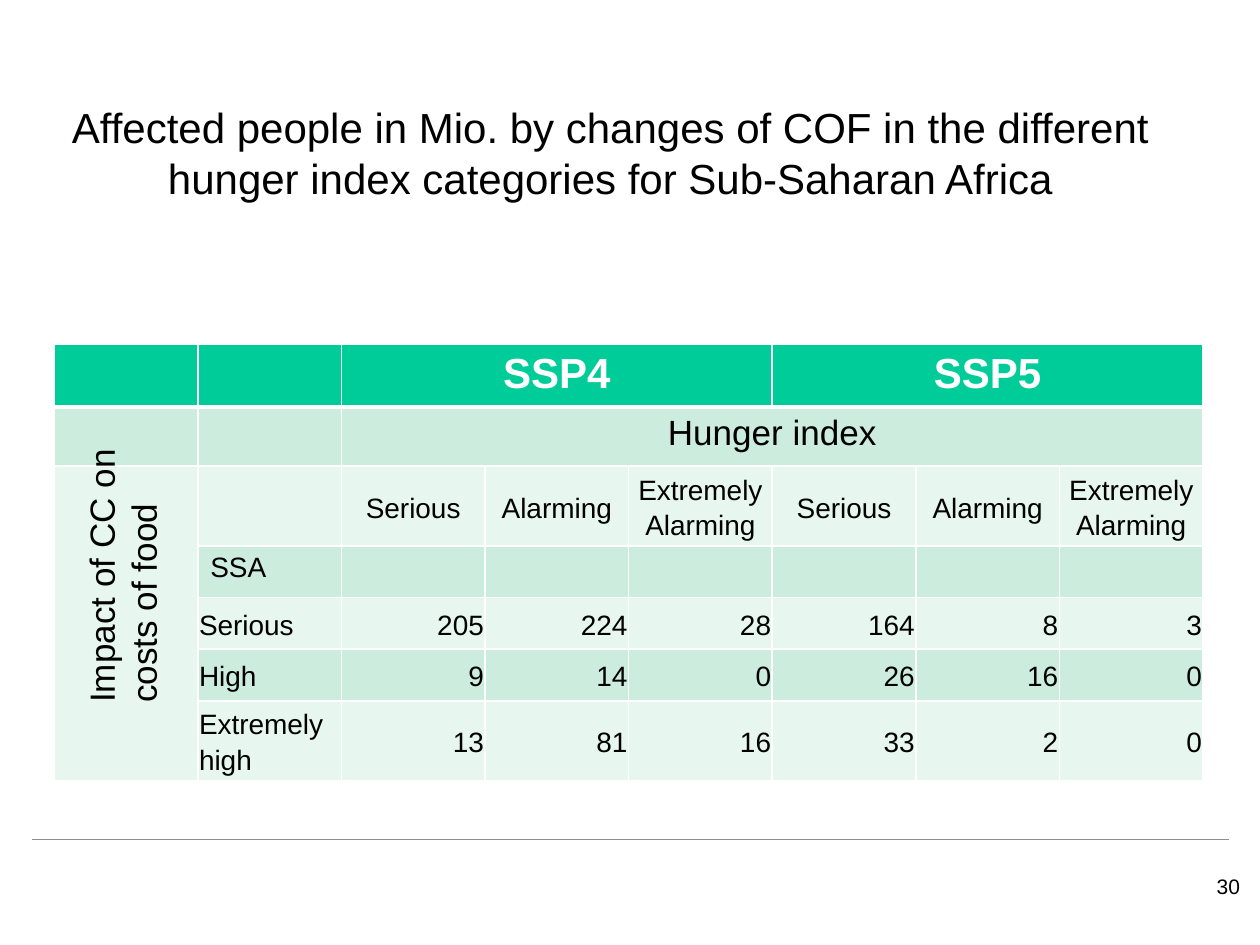
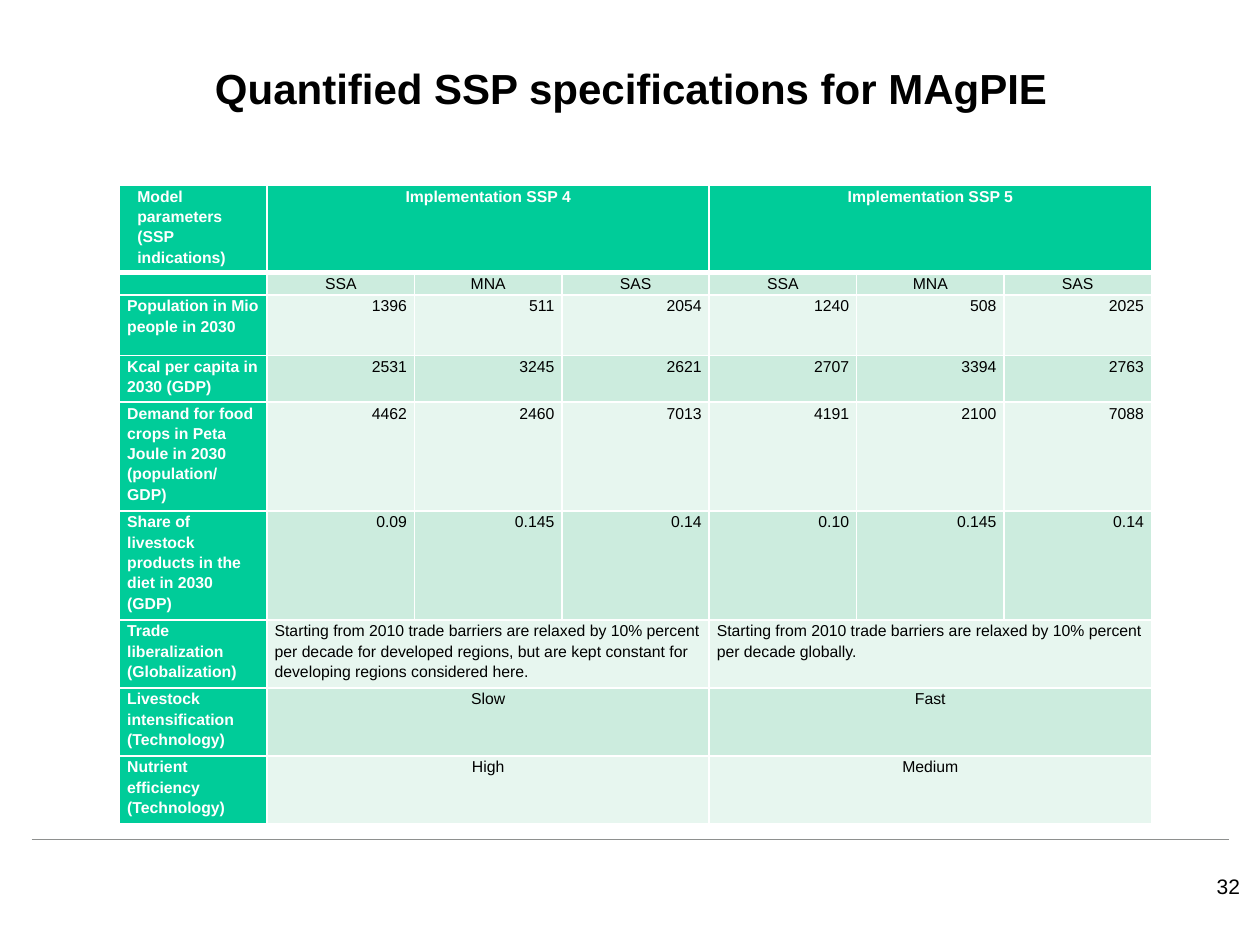
from dataclasses import dataclass

from lxml import etree
from pptx import Presentation
from pptx.dml.color import RGBColor
from pptx.enum import shapes, text
from pptx.oxml.ns import qn
from pptx.util import Emu, Pt

PX = 9144  # 100 px to the inch
LEFT, CENTER, RIGHT = text.PP_ALIGN.LEFT, text.PP_ALIGN.CENTER, text.PP_ALIGN.RIGHT
TOP, MIDDLE = text.MSO_ANCHOR.TOP, text.MSO_ANCHOR.MIDDLE


@dataclass(frozen=True)
class Theme:
    font: str = "Arial"
    ink: str = "000000"
    paper: str = "FFFFFF"
    header: str = "00CC99"
    band_dark: str = "CCECDE"
    band_light: str = "E7F6EF"
    rule: str = "8E908F"
    title: int = 24
    subhead: int = 20
    body: int = 16
    footer: int = 12
    small: int = 9


THEME = Theme()


def px(length):
    return Emu(length * PX)


def write(frame, words, size=THEME.body, color=THEME.ink, bold=False,
          align=LEFT, spacing=None):
    """Fill a text frame, one paragraph for each line of words."""
    for number, line in enumerate(words.split("\n")):
        para = frame.paragraphs[0] if number == 0 else frame.add_paragraph()
        para.alignment = align
        if spacing:
            para.line_spacing = spacing
        if not line:
            etree.SubElement(para._p, qn("a:endParaRPr"), sz=str(size * 100))
            continue
        span = para.add_run()
        span.text = line
        span.font.name = THEME.font
        span.font.size = Pt(size)
        span.font.bold = bold
        span.font.color.rgb = RGBColor.from_string(color)


def set_margins(target, margins):
    (target.margin_left, target.margin_top,
     target.margin_right, target.margin_bottom) = map(px, margins)


def set_borders(cell, color, widths):
    """Draw the cell's left, right, top and bottom lines, widths in points."""
    properties = cell._tc.get_or_add_tcPr()
    for place, (side, width) in enumerate(zip("LRTB", widths)):
        line = etree.Element(qn(f"a:ln{side}"), w=str(Pt(width)))
        fill = etree.SubElement(line, qn("a:solidFill"))
        etree.SubElement(fill, qn("a:srgbClr"), val=color)
        properties.insert(place, line)


class Deck:
    def __init__(self, theme):
        self.theme = theme
        self.deck = Presentation()
        self.deck.slide_width, self.deck.slide_height = px(1000), px(750)
        self.page = None

    def add_page(self, number):
        self.page = self.deck.slides.add_slide(self.deck.slide_layouts[6])
        self.rule(25, 975, 666)
        self.text((890, 688, 104, 24), str(number), size=self.theme.footer, align=RIGHT)

    def rule(self, left, right, y):
        line = self.page.shapes.add_connector(
            shapes.MSO_CONNECTOR.STRAIGHT, px(left), px(y), px(right), px(y))
        line.line.color.rgb = RGBColor.from_string(self.theme.rule)
        line.line.width = Pt(0.5)
        etree.SubElement(line._element.spPr, qn("a:effectLst"))

    def text(self, at, words, margins=(10, 5, 10, 5), anchor=TOP, wrap=True,
             rotation=0, **style):
        box = self.page.shapes.add_textbox(*map(px, at))
        box.rotation = rotation
        frame = box.text_frame
        frame.word_wrap = wrap
        frame.vertical_anchor = anchor
        set_margins(frame, margins)
        write(frame, words, **style)

    def table(self, at, column_width, heights, rows, look, merges=()):
        """Build a banded table; None in rows continues the cell to its left."""
        columns = len(rows[0])
        table = self.page.shapes.add_table(
            len(rows), columns, px(at[0]), px(at[1]),
            px(column_width * columns), px(sum(heights))).table
        table.first_row = table.horz_banding = False
        for column in table.columns:
            column.width = px(column_width)
        for r, (height, row) in enumerate(zip(heights, rows)):
            table.rows[r].height = px(height)
            for c, words in enumerate(row):
                self.fill_cell(table.cell(r, c), r, words or "", **look(r, c, words))
            for c in range(columns):
                end = c
                while end + 1 < columns and row[end + 1] is None:
                    end += 1
                if row[c] is not None and end > c:
                    table.cell(r, c).merge(table.cell(r, end))
        for first, last in merges:
            table.cell(*first).merge(table.cell(*last))

    def fill_cell(self, cell, r, words, margins, anchor=TOP, fill=None, **style):
        band = self.theme.band_dark if r % 2 else self.theme.band_light
        if r == 0:
            fill = self.theme.header
            style.update(color=self.theme.paper, bold=True)
        cell.fill.solid()
        cell.fill.fore_color.rgb = RGBColor.from_string(fill or band)
        cell.vertical_anchor = anchor
        set_margins(cell, margins)
        set_borders(cell, self.theme.paper,
                    (1, 1, 3 if r == 1 else 1, 3 if r == 0 else 1))
        write(cell.text_frame, words, **style)


def hunger_look(r, c, words):
    if r < 2:
        return dict(margins=(10, 5, 10, 5), align=CENTER,
                    size=(THEME.title, THEME.subhead)[r] if words else THEME.body)
    if r == 3 or not words:
        return dict(margins=(10, 5, 10, 5),
                    fill=THEME.band_light if c == 0 else None)
    align = CENTER if r == 2 else LEFT if c == 1 else RIGHT
    return dict(margins=(1, 1, 1, 1), anchor=MIDDLE, align=align, spacing=1.15)


def parameter_look(r, c, words):
    look = dict(margins=(6, 0, 6, 0), size=THEME.small, spacing=1.15)
    if c == 0:
        look.update(fill=THEME.header, color=THEME.paper, bold=True)
        if r == 0:
            look["margins"] = (14, 0, 6, 0)
    elif 2 <= r <= 5:
        look["align"] = RIGHT
    elif r != 6:
        look["align"] = CENTER
    return look


def hunger_page(deck):
    deck.add_page(30)
    levels = ["Serious", "Alarming", "Extremely Alarming"]
    rows = [
        ["", "", "SSP4", None, None, "SSP5", None, None],
        ["", "", "Hunger index"] + [None] * 5,
        ["", ""] + levels * 2,
        ["", "SSA"] + [""] * 6,
        ["", "Serious", "205", "224", "28", "164", "8", "3"],
        ["", "High", "9", "14", "0", "26", "16", "0"],
        ["", "Extremely high", "13", "81", "16", "33", "2", "0"],
    ]
    deck.table((43, 273), 114, (47, 47, 58, 41, 41, 41, 58), rows,
               hunger_look, merges=[((2, 0), (6, 0))])
    deck.text((-14, 418, 222, 77), "Impact of CC on\ncosts of food",
              wrap=False, rotation=270, size=THEME.subhead)
    deck.text((43, 76, 883, 91),
              "Affected people in Mio. by changes of COF in the different\n"
              "hunger index categories for Sub-Saharan Africa",
              wrap=False, size=THEME.title, align=CENTER)


def parameter_page(deck):
    deck.add_page(32)
    deck.text((51, 28, 900, 84), "Quantified SSP specifications for MAgPIE",
              margins=(0, 0, 0, 0), anchor=MIDDLE, size=THEME.title,
              bold=True, align=CENTER)

    def halves(label, ssp4, ssp5):
        return [label, ssp4, None, None, ssp5, None, None]

    rows = [
        halves("Model parameters (SSP indications)",
               "Implementation SSP 4", "Implementation SSP 5"),
        [""] + ["SSA", "MNA", "SAS"] * 2,
        ["Population in Mio people in 2030",
         "1396", "511", "2054", "1240", "508", "2025"],
        ["Kcal per capita in 2030 (GDP)",
         "2531", "3245", "2621", "2707", "3394", "2763"],
        ["Demand for food crops in Peta Joule in 2030 (population/ GDP)",
         "4462", "2460", "7013", "4191", "2100", "7088"],
        ["Share of livestock products in the diet in 2030 (GDP)",
         "0.09", "0.145", "0.14", "0.10", "0.145", "0.14"],
        halves("Trade liberalization (Globalization)",
               "Starting from 2010 trade barriers are relaxed by 10% percent per "
               "decade for developed regions, but are kept constant for "
               "developing regions considered here.",
               "Starting from 2010 trade barriers are relaxed by 10% percent per "
               "decade globally."),
        halves("Livestock intensification (Technology)", "Slow", "Fast"),
        halves("Nutrient efficiency (Technology)", "High", "Medium"),
    ]
    deck.table((95, 147), 117, (64, 18, 48, 37, 80, 81, 54, 54, 54), rows,
               parameter_look)


def main():
    deck = Deck(THEME)
    hunger_page(deck)
    parameter_page(deck)
    deck.deck.save("out.pptx")


if __name__ == "__main__":
    main()
